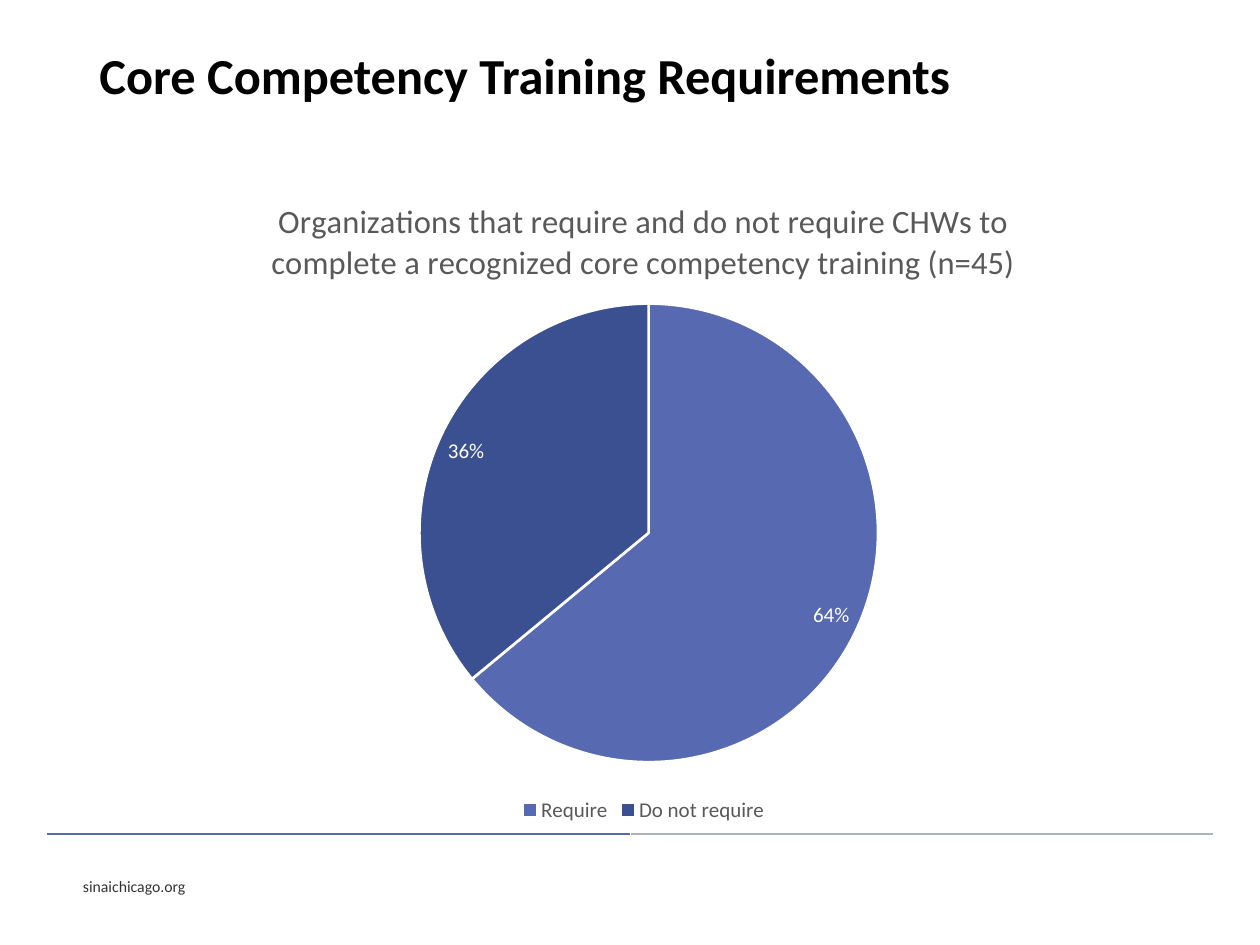
from dataclasses import dataclass

from lxml import etree
from pptx import Presentation
from pptx.chart.data import CategoryChartData
from pptx.dml.color import RGBColor
from pptx.enum.chart import XL_CHART_TYPE, XL_LABEL_POSITION, XL_LEGEND_POSITION
from pptx.enum.shapes import MSO_CONNECTOR
from pptx.enum.text import MSO_ANCHOR
from pptx.oxml import parse_xml
from pptx.oxml.ns import nsdecls, qn
from pptx.util import Inches, Pt

FONT = "Calibri"
COLORS = {
    "title": "000000",
    "footer": "333333",
    "chart_text": "595959",
    "label": "FFFFFF",
    "require": "5769B1",
    "do_not_require": "3B5091",
    "rule_left": "5769B1",
    "rule_right": "ABB4BC",
}


@dataclass
class Label:
    text: str
    left: float
    top: float
    width: float
    height: float
    size: float
    color: str
    bold: bool = False
    wrap: bool = True
    line_spacing: float = 1.0


@dataclass
class Rule:
    start: float
    end: float
    color: str


@dataclass
class Slice:
    name: str
    value: float
    color: str


RULE_TOP = 6.62
RULES = [Rule(0.37, 5, "rule_left"), Rule(5.01, 9.63, "rule_right")]
LABELS = [
    Label("sinaichicago.org", 0.56, 6.91, 1.03, 0.25, 9, "footer", wrap=False),
    Label("Core Competency Training Requirements", 0.69, 0.34, 8.62, 0.56,
          28.8, "title", bold=True, line_spacing=0.9),
]
CHART_TITLE = ("Organizations that require and do not require CHWs to "
               "complete a recognized core competency training (n=45)")
SLICES = [
    Slice("Require", 0.64, "require"),
    Slice("Do not require", 0.36, "do_not_require"),
]
PLOT_LAYOUT = {"x": 0.27, "y": 0.2, "w": 0.47, "h": 0.7}


def rgb(name: str) -> RGBColor:
    return RGBColor.from_string(COLORS[name])


def style_font(font, size: float, color: str, bold: bool = False) -> None:
    font.name = FONT
    font.size = Pt(size)
    font.bold = bold
    font.color.rgb = rgb(color)


def add_label(slide, label: Label) -> None:
    shape = slide.shapes.add_textbox(Inches(label.left), Inches(label.top),
                                     Inches(label.width), Inches(label.height))
    frame = shape.text_frame
    frame.word_wrap = label.wrap
    frame.vertical_anchor = MSO_ANCHOR.MIDDLE
    paragraph = frame.paragraphs[0]
    paragraph.line_spacing = label.line_spacing
    run = paragraph.add_run()
    run.text = label.text
    style_font(run.font, label.size, label.color, label.bold)


def add_rule(slide, rule: Rule) -> None:
    line = slide.shapes.add_connector(MSO_CONNECTOR.STRAIGHT, Inches(rule.start), Inches(RULE_TOP),
                                      Inches(rule.end), Inches(RULE_TOP))
    line.line.color.rgb = rgb(rule.color)
    line.line.width = Pt(1)
    etree.SubElement(line._element.spPr, qn("a:effectLst"))


def place_plot(chart) -> None:
    """Fix the pie's inner plot area as fractions of the chart."""
    plot_area = chart._chartSpace.chart.plotArea
    for old_layout in plot_area.findall(qn("c:layout")):
        plot_area.remove(old_layout)
    sizes = "".join(f'<c:{key} val="{value}"/>' for key, value in PLOT_LAYOUT.items())
    plot_area.insert(0, parse_xml(
        f'<c:layout {nsdecls("c")}><c:manualLayout><c:layoutTarget val="inner"/>'
        f'<c:xMode val="edge"/><c:yMode val="edge"/>{sizes}</c:manualLayout></c:layout>'))


def add_training_pie(slide) -> None:
    data = CategoryChartData(number_format="0%")
    data.categories = [item.name for item in SLICES]
    data.add_series("Series 1", [item.value for item in SLICES])
    chart = slide.shapes.add_chart(XL_CHART_TYPE.PIE, Inches(1.21), Inches(1.37),
                                   Inches(7.8), Inches(5.2), data).chart
    style_font(chart.font, 10, "title")

    chart.has_title = True
    run = chart.chart_title.text_frame.paragraphs[0].add_run()
    run.text = CHART_TITLE
    style_font(run.font, 18.6, "chart_text")
    chart.chart_title.include_in_layout = False

    chart.has_legend = True
    chart.legend.position = XL_LEGEND_POSITION.BOTTOM
    chart.legend.include_in_layout = False
    style_font(chart.legend.font, 12, "chart_text")

    plot = chart.plots[0]
    plot.vary_by_categories = True
    for index, item in enumerate(SLICES):
        point_format = plot.series[0].points[index].format
        point_format.fill.solid()
        point_format.fill.fore_color.rgb = rgb(item.color)
        point_format.line.color.rgb = rgb("label")
        point_format.line.width = Pt(1.5)

    plot.has_data_labels = True
    labels = plot.data_labels
    labels.show_value = True
    labels.show_percentage = False
    labels.number_format = "0%"
    labels.number_format_is_linked = False
    labels.position = XL_LABEL_POSITION.INSIDE_END
    style_font(labels.font, 12, "label")
    place_plot(chart)


def main() -> None:
    presentation = Presentation()
    presentation.slide_width = Inches(10)
    presentation.slide_height = Inches(7.5)
    slide = presentation.slides.add_slide(presentation.slide_layouts[6])
    for rule in RULES:
        add_rule(slide, rule)
    for label in LABELS:
        add_label(slide, label)
    add_training_pie(slide)
    presentation.save("out.pptx")


if __name__ == "__main__":
    main()
